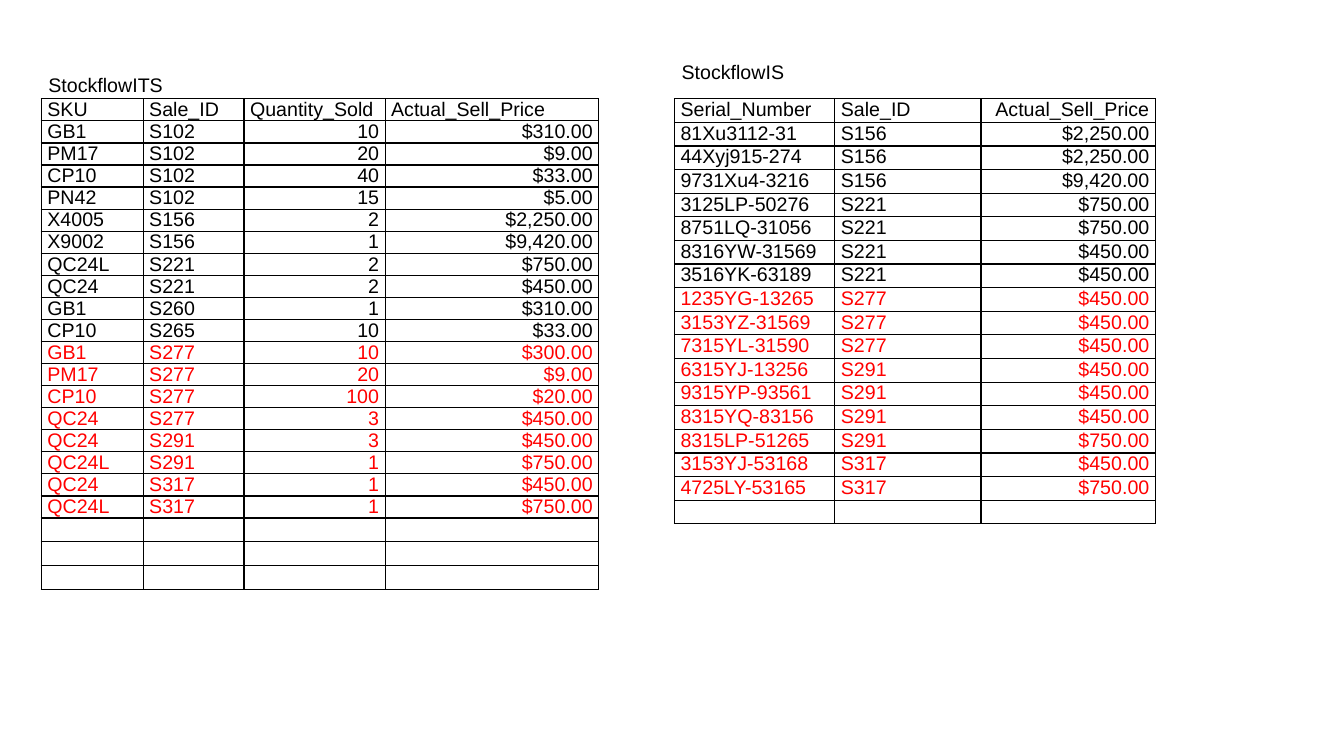
from lxml.etree import SubElement
from pptx import Presentation
from pptx.dml.color import RGBColor
from pptx.enum.text import MSO_ANCHOR, PP_ALIGN
from pptx.oxml.ns import qn
from pptx.util import Inches, Pt

FONT, SIZE = "Arial", 14
COLORS = {"text": "000000", "new": "FF0000", "border": "000000"}

ITS_ROWS = [
    ("SKU", "Sale_ID", "Quantity_Sold", "Actual_Sell_Price"),
    ("GB1", "S102", "10", "$310.00"),
    ("PM17", "S102", "20", "$9.00"),
    ("CP10", "S102", "40", "$33.00"),
    ("PN42", "S102", "15", "$5.00"),
    ("X4005", "S156", "2", "$2,250.00"),
    ("X9002", "S156", "1", "$9,420.00"),
    ("QC24L", "S221", "2", "$750.00"),
    ("QC24", "S221", "2", "$450.00"),
    ("GB1", "S260", "1", "$310.00"),
    ("CP10", "S265", "10", "$33.00"),
    ("GB1", "S277", "10", "$300.00"),
    ("PM17", "S277", "20", "$9.00"),
    ("CP10", "S277", "100", "$20.00"),
    ("QC24", "S277", "3", "$450.00"),
    ("QC24", "S291", "3", "$450.00"),
    ("QC24L", "S291", "1", "$750.00"),
    ("QC24", "S317", "1", "$450.00"),
    ("QC24L", "S317", "1", "$750.00"),
]
IS_ROWS = [
    ("Serial_Number", "Sale_ID", "Actual_Sell_Price"),
    ("81Xu3112-31", "S156", "$2,250.00"),
    ("44Xyj915-274", "S156", "$2,250.00"),
    ("9731Xu4-3216", "S156", "$9,420.00"),
    ("3125LP-50276", "S221", "$750.00"),
    ("8751LQ-31056", "S221", "$750.00"),
    ("8316YW-31569", "S221", "$450.00"),
    ("3516YK-63189", "S221", "$450.00"),
    ("1235YG-13265", "S277", "$450.00"),
    ("3153YZ-31569", "S277", "$450.00"),
    ("7315YL-31590", "S277", "$450.00"),
    ("6315YJ-13256", "S291", "$450.00"),
    ("9315YP-93561", "S291", "$450.00"),
    ("8315YQ-83156", "S291", "$450.00"),
    ("8315LP-51265", "S291", "$750.00"),
    ("3153YJ-53168", "S317", "$450.00"),
    ("4725LY-53165", "S317", "$750.00"),
]
# first_new: first red row; header_right: header cells that align right
TABLES = [
    dict(name="StockflowITS", label=(0.41, 0.68, 3.87, 0.55), left=0.41, height=4.82,
         widths=(1.01, 1, 1.4, 2.12), rows=ITS_ROWS, empty=3, first_new=11, header_right=()),
    dict(name="StockflowIS", label=(6.69, 0.55, 1.18, 0.31), left=6.69, height=4.22,
         widths=(1.59, 1.45, 1.73), rows=IS_ROWS, empty=1, first_new=8, header_right=(2,)),
]
TABLE_TOP = 0.98


def add_run(p, text, color):
    r = p.add_run()
    r.text = text
    r.font.name, r.font.size = FONT, Pt(SIZE)
    r.font.color.rgb = RGBColor.from_string(COLORS[color])


def add_borders(cell):
    tc_pr = cell._tc.get_or_add_tcPr()
    for side in ("lnL", "lnR", "lnT", "lnB"):
        ln = SubElement(tc_pr, qn(f"a:{side}"), w=str(Pt(1)))
        fill = SubElement(ln, qn("a:solidFill"))
        SubElement(fill, qn("a:srgbClr"), val=COLORS["border"])


def add_label(s, text, box):
    tf = s.shapes.add_textbox(*map(Inches, box)).text_frame
    tf.word_wrap = True
    tf.vertical_anchor = MSO_ANCHOR.TOP
    tf.margin_left = tf.margin_right = Inches(0.07)
    tf.margin_top = tf.margin_bottom = Inches(0.04)
    add_run(tf.paragraphs[0], text, "text")


def add_stock_table(s, t):
    cols = len(t["widths"])
    rows = t["rows"] + [("",) * cols] * t["empty"]
    table = s.shapes.add_table(len(rows), cols, Inches(t["left"]), Inches(TABLE_TOP),
                               Inches(sum(t["widths"])), Inches(t["height"])).table
    table.first_row = table.horz_banding = False
    for col, width in zip(table.columns, t["widths"]):
        col.width = Inches(width)
    for i, values in enumerate(rows):
        for j, value in enumerate(values):
            cell = table.cell(i, j)
            cell.margin_left = cell.margin_right = Inches(0.06)
            cell.margin_top = cell.margin_bottom = 0
            add_borders(cell)
            cell.fill.background()
            p = cell.text_frame.paragraphs[0]
            if not value:
                # keeps an empty row as low as a filled one
                SubElement(p._p, qn("a:endParaRPr"), sz=str(SIZE * 100))
                continue
            if j in t["header_right"] or (i > 0 and j >= 2):
                p.alignment = PP_ALIGN.RIGHT
            add_run(p, value, "new" if i >= t["first_new"] else "text")


prs = Presentation()
prs.slide_width, prs.slide_height = Inches(13.33), Inches(7.5)
s = prs.slides.add_slide(prs.slide_layouts[6])
for t in TABLES:
    add_stock_table(s, t)
    add_label(s, t["name"], t["label"])
prs.save("out.pptx")
